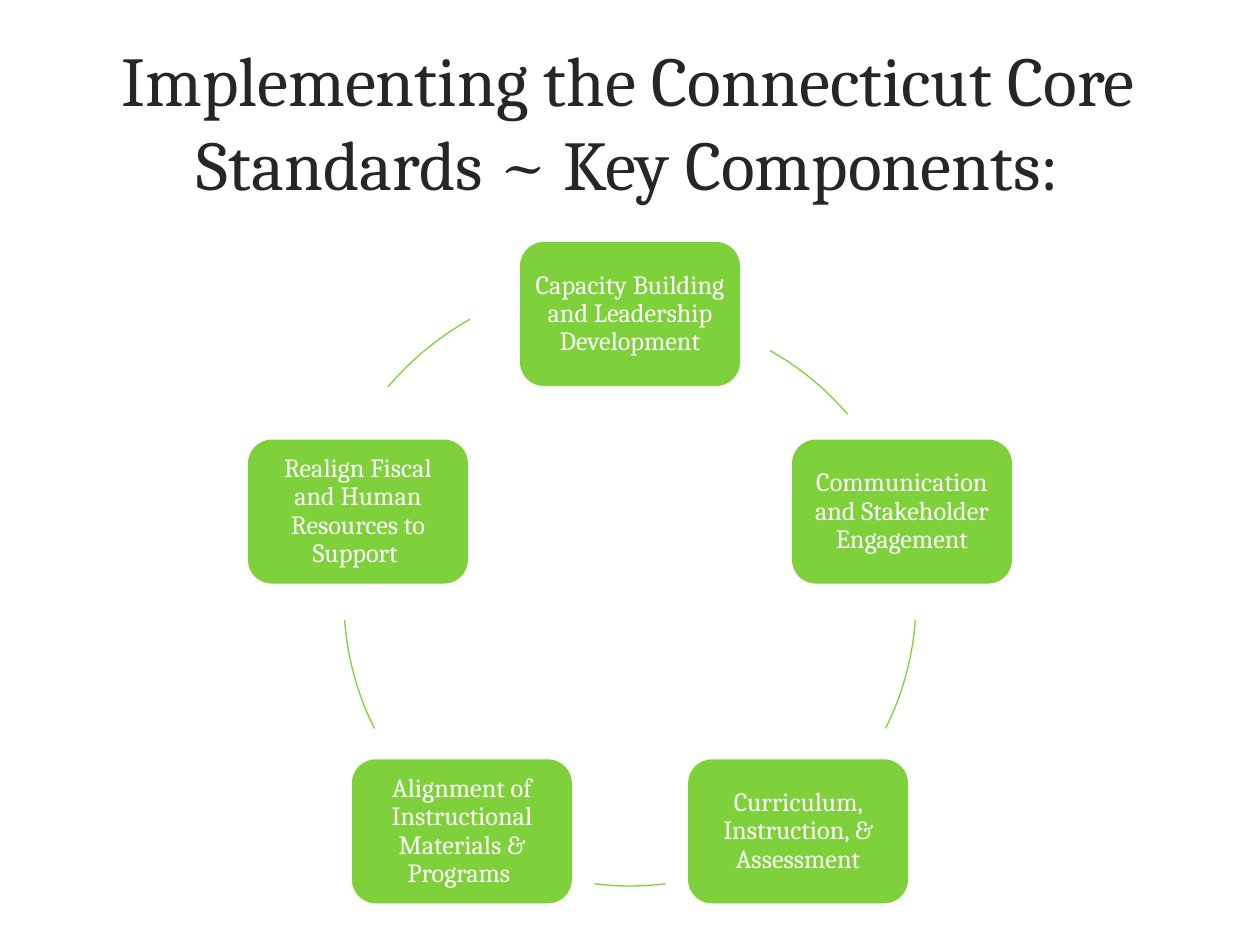
import math

import pptx
import pptx.dml.color
import pptx.enum.shapes
import pptx.enum.text
import pptx.util

EMU_PER_PX = 914400 / 126
COLORS = {"title": "262626", "green": "7FD13B", "white": "FFFFFF"}
FONT = "Cambria"
CENTER_X, CENTER_Y, RADIUS = 630, 600, 286
CARD_WIDTH, CARD_HEIGHT = 220, 144
COMPONENTS = [
    "Capacity Building and Leadership Development",
    "Communication and Stakeholder Engagement",
    "Curriculum, Instruction, & Assessment",
    "Alignment of Instructional Materials & Programs ",
    "Realign Fiscal and Human Resources to Support ",
]
RING_BOX = (CENTER_X - RADIUS, CENTER_Y - RADIUS, 2 * RADIUS, 2 * RADIUS)
OUTER_BOX = (316, 281, 600, 606)
ARCS = [
    (RING_BOX, 299.3, 319.5),
    (RING_BOX, 4, 26.7),
    (RING_BOX, 82.9, 97.1),
    (RING_BOX, 153.3, 176),
    (OUTER_BOX, 220.8, 241.1),
]


def px(length):
    """Turn pixels into EMU."""
    return pptx.util.Emu(round(length * EMU_PER_PX))


def rgb(name):
    """Look up a named colour."""
    return pptx.dml.color.RGBColor.from_string(COLORS[name])


def set_text(shape, text, size, color, inset_x, inset_y, line_spacing=None, space_after=None):
    """Write one centred, formatted paragraph into a shape."""
    frame = shape.text_frame
    frame.word_wrap = True
    frame.auto_size = pptx.enum.text.MSO_AUTO_SIZE.NONE
    frame.vertical_anchor = pptx.enum.text.MSO_ANCHOR.MIDDLE
    frame.margin_left = frame.margin_right = px(inset_x)
    frame.margin_top = frame.margin_bottom = px(inset_y)
    paragraph = frame.paragraphs[0]
    paragraph.alignment = pptx.enum.text.PP_ALIGN.CENTER
    paragraph.line_spacing = line_spacing
    paragraph.space_after = space_after
    run = paragraph.add_run()
    run.text = text
    run.font.name = FONT
    run.font.size = pptx.util.Pt(size)
    run.font.color.rgb = rgb(color)


def add_title(slide, text):
    """Place and fill the title placeholder."""
    title = slide.shapes.title
    title.left, title.top, title.width, title.height = map(px, (74, 21, 1108, 199))
    set_text(title, text, 40, "title", inset_x=13, inset_y=6)


def add_card(slide, text, degrees):
    """Add a rounded card centred on the ring."""
    angle = math.radians(degrees)
    left = CENTER_X + RADIUS * math.cos(angle) - CARD_WIDTH / 2
    top = CENTER_Y + RADIUS * math.sin(angle) - CARD_HEIGHT / 2
    card = slide.shapes.add_shape(
        pptx.enum.shapes.MSO_SHAPE.ROUNDED_RECTANGLE,
        px(left), px(top), px(CARD_WIDTH), px(CARD_HEIGHT),
    )
    card.shadow.inherit = False
    card.fill.solid()
    card.fill.fore_color.rgb = rgb("green")
    card.line.fill.background()
    set_text(card, text, 15, "white", inset_x=7, inset_y=7,
             line_spacing=0.9, space_after=pptx.util.Pt(5.2))


def add_arc(slide, box, start, end):
    """Add an open arc of the circle in a box, with angles in degrees."""
    arc = slide.shapes.add_shape(pptx.enum.shapes.MSO_SHAPE.ARC, *map(px, box))
    arc.adjustments[0] = start * 0.6
    arc.adjustments[1] = end * 0.6
    arc.shadow.inherit = False
    arc.fill.background()
    arc.line.color.rgb = rgb("green")
    arc.line.width = pptx.util.Pt(0.75)


def main():
    """Build the slide and save it."""
    presentation = pptx.Presentation()
    presentation.slide_width, presentation.slide_height = px(1260), px(945)
    slide = presentation.slides.add_slide(presentation.slide_layouts[5])
    add_title(slide, "Implementing the Connecticut Core Standards ~ Key Components:")
    for index, (text, arc) in enumerate(zip(COMPONENTS, ARCS)):
        add_card(slide, text, -90 + index * 360 / len(COMPONENTS))
        add_arc(slide, *arc)
    presentation.save("out.pptx")


if __name__ == "__main__":
    main()
